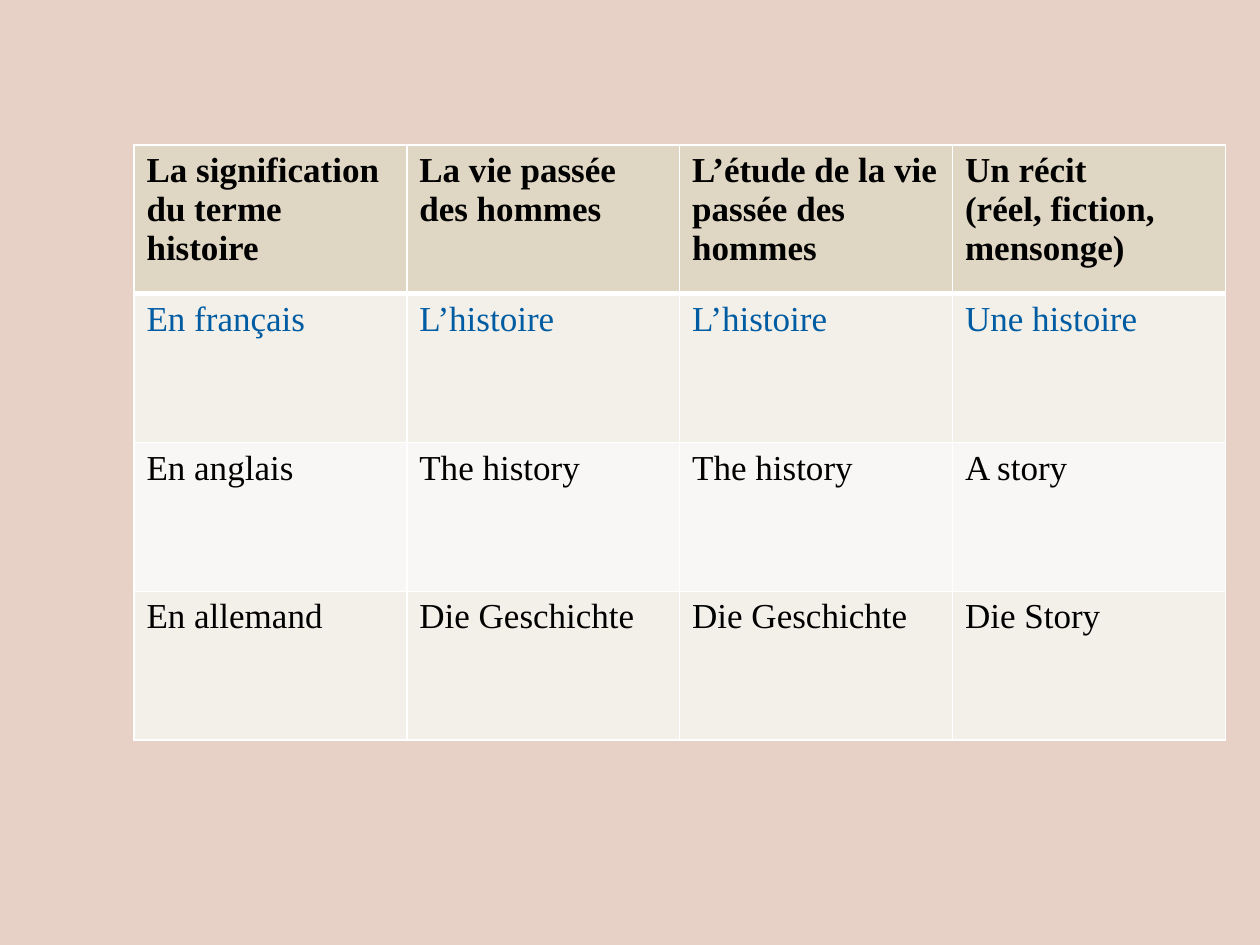
from pptx import Presentation
from pptx.dml.color import RGBColor
from pptx.oxml import parse_xml
from pptx.oxml.ns import nsdecls
from pptx.util import Cm, Pt

BACKGROUND = RGBColor(0xE7, 0xD1, 0xC7)
HEADER_FILL = RGBColor(0xDF, 0xD6, 0xC3)
DARK_BAND = RGBColor(0xF3, 0xF0, 0xE9)
LIGHT_BAND = RGBColor(0xF9, 0xF7, 0xF5)
WHITE = RGBColor(0xFF, 0xFF, 0xFF)
BLACK = RGBColor(0, 0, 0)
BLUE = RGBColor(0x00, 0x5C, 0xA2)

FONT = "Times New Roman"
MEANINGS = [
    ["La signification du terme histoire", "La vie passée des hommes",
     "L’étude de la vie passée des hommes", "Un récit\n(réel, fiction, mensonge)"],
    ["En français", "L’histoire", "L’histoire", "Une histoire"],
    ["En anglais", "The history", "The history", "A story"],
    ["En allemand", "Die Geschichte", "Die Geschichte", "Die Story"],
]
ROW_STYLES = [(HEADER_FILL, BLACK), (DARK_BAND, BLUE), (LIGHT_BAND, BLACK), (DARK_BAND, BLACK)]


def set_borders(cell, **widths):
    """Draw white cell borders, with widths in points keyed by side."""
    properties = cell._tc.get_or_add_tcPr()
    for side in ("L", "R", "T", "B"):
        properties.append(parse_xml(
            f'<a:ln{side} {nsdecls("a")} w="{Pt(widths.get(side, 1))}"><a:solidFill>'
            f'<a:srgbClr val="{WHITE}"/></a:solidFill></a:ln{side}>'))


def fill_cell(cell, text, fill, color, bold):
    """Write and format the text of one cell."""
    cell.fill.solid()
    cell.fill.fore_color.rgb = fill
    cell.text = text
    for para in cell.text_frame.paragraphs:
        para.font.name = FONT
        para.font.size = Pt(20)
        para.font.bold = bold
        para.font.color.rgb = color


def add_meanings_table(page):
    """Add the table comparing the word in three languages."""
    table = page.shapes.add_table(
        len(MEANINGS), len(MEANINGS[0]), Cm(2.7), Cm(2.92), Cm(22), Cm(12)).table
    for row, (texts, (fill, color)) in enumerate(zip(MEANINGS, ROW_STYLES)):
        for column, text in enumerate(texts):
            cell = table.cell(row, column)
            set_borders(cell, T=3 if row == 1 else 1, B=3 if row == 0 else 1)
            fill_cell(cell, text, fill, color, bold=row == 0)


def main():
    """Build and save the slide."""
    deck = Presentation()
    deck.slide_width, deck.slide_height = Cm(25.4), Cm(19.05)
    page = deck.slides.add_slide(deck.slide_layouts[6])
    page.background.fill.solid()
    page.background.fill.fore_color.rgb = BACKGROUND
    add_meanings_table(page)
    deck.save("out.pptx")


if __name__ == "__main__":
    main()
